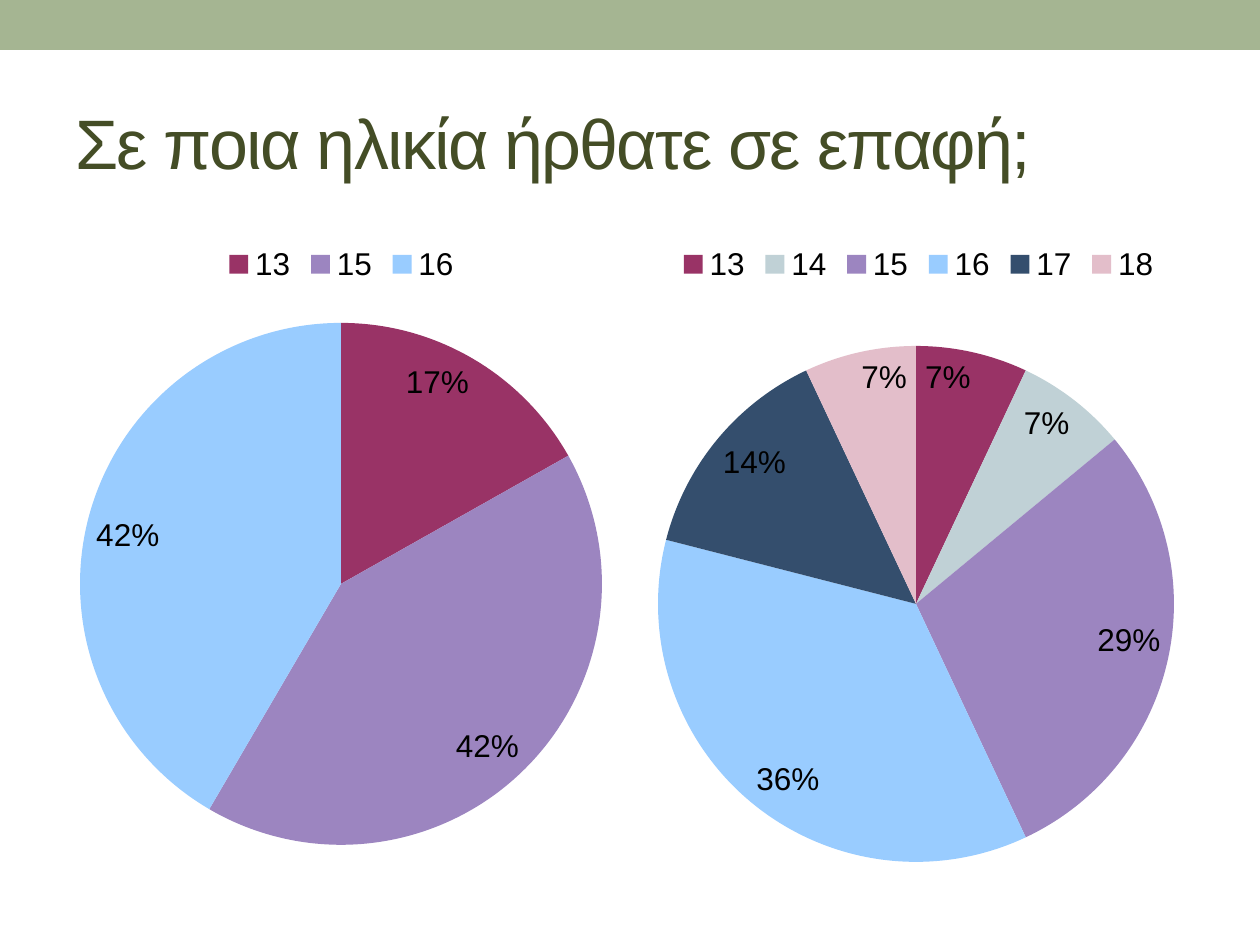
from lxml.etree import SubElement
from pptx import Presentation
from pptx.chart.data import CategoryChartData
from pptx.dml.color import RGBColor
from pptx.enum.chart import XL_CHART_TYPE, XL_LABEL_POSITION, XL_LEGEND_POSITION
from pptx.enum.shapes import MSO_SHAPE
from pptx.enum.text import MSO_ANCHOR
from pptx.oxml.ns import qn
from pptx.util import Pt

PX = 914400 / 126
FONT = "Arial"
AGE_COLORS = {
    "13": "993366",
    "14": "C0D1D6",
    "15": "9C85C0",
    "16": "99CCFF",
    "17": "344E6D",
    "18": "E3BECA",
}


def px(length):
    return round(length * PX)


def emu_box(box):
    return [px(length) for length in box]


def color(hex_value):
    return RGBColor.from_string(hex_value)


def style_font(font, size, hex_value):
    font.name = FONT
    font.size = Pt(size)
    font.color.rgb = color(hex_value)


def add_banner(slide, box):
    banner = slide.shapes.add_shape(MSO_SHAPE.RECTANGLE, *emu_box(box))
    banner.shadow.inherit = False
    banner.fill.solid()
    banner.fill.fore_color.rgb = color("A5B592")
    banner.line.fill.background()


def add_title(slide, box, text):
    frame = slide.shapes.add_textbox(*emu_box(box)).text_frame
    frame.word_wrap = True
    frame.vertical_anchor = MSO_ANCHOR.MIDDLE
    run = frame.paragraphs[0].add_run()
    run.text = text
    style_font(run.font, 40, "444D26")
    run._r.get_or_add_rPr().set("spc", "-100")


def place_plot(chart, box, plot_box):
    left, top, width, height = plot_box
    fractions = {
        "x": left / box[2],
        "y": top / box[3],
        "w": width / box[2],
        "h": height / box[3],
    }
    plot_area = chart._chartSpace.chart.plotArea
    for old_layout in plot_area.findall(qn("c:layout")):
        plot_area.remove(old_layout)
    layout = SubElement(plot_area, qn("c:layout"))
    plot_area.insert(0, layout)
    manual = SubElement(layout, qn("c:manualLayout"))
    settings = {"layoutTarget": "inner", "xMode": "edge", "yMode": "edge"}
    for name, value in {**settings, **fractions}.items():
        SubElement(manual, qn(f"c:{name}")).set("val", str(value))


def add_age_pie(slide, box, plot_box, shares):
    data = CategoryChartData()
    data.categories = list(shares)
    data.add_series("Series 1", list(shares.values()))
    chart = slide.shapes.add_chart(XL_CHART_TYPE.PIE, *emu_box(box), data).chart
    style_font(chart.font, 18, "000000")
    chart.has_title = False
    chart.has_legend = True
    chart.legend.position = XL_LEGEND_POSITION.TOP
    chart.legend.include_in_layout = False
    place_plot(chart, box, plot_box)

    plot = chart.plots[0]
    plot.vary_by_categories = True
    for index, age in enumerate(shares):
        point_format = plot.series[0].points[index].format
        point_format.fill.solid()
        point_format.fill.fore_color.rgb = color(AGE_COLORS[age])
        point_format.line.fill.background()
    plot.has_data_labels = True
    labels = plot.data_labels
    labels.show_value = False
    labels.show_percentage = True
    labels.number_format = "0%"
    labels.number_format_is_linked = False
    labels.position = XL_LABEL_POSITION.INSIDE_END
    style_font(labels.font, 18, "000000")


def main():
    presentation = Presentation()
    presentation.slide_width = px(1260)
    presentation.slide_height = px(945)
    slide = presentation.slides.add_slide(presentation.slide_layouts[6])
    add_banner(slide, (0, 0, 1260, 50))
    add_title(slide, (63, 73, 1134, 136), "Σε ποια ηλικία ήρθατε σε επαφή;")
    add_age_pie(slide, (63, 231, 557, 650), (17, 92, 522, 522),
                {"13": 17, "15": 42, "16": 42})
    add_age_pie(slide, (640, 231, 557, 650), (18, 115, 516, 516),
                {"13": 7, "14": 7, "15": 29, "16": 36, "17": 14, "18": 7})
    presentation.save("out.pptx")


if __name__ == "__main__":
    main()
